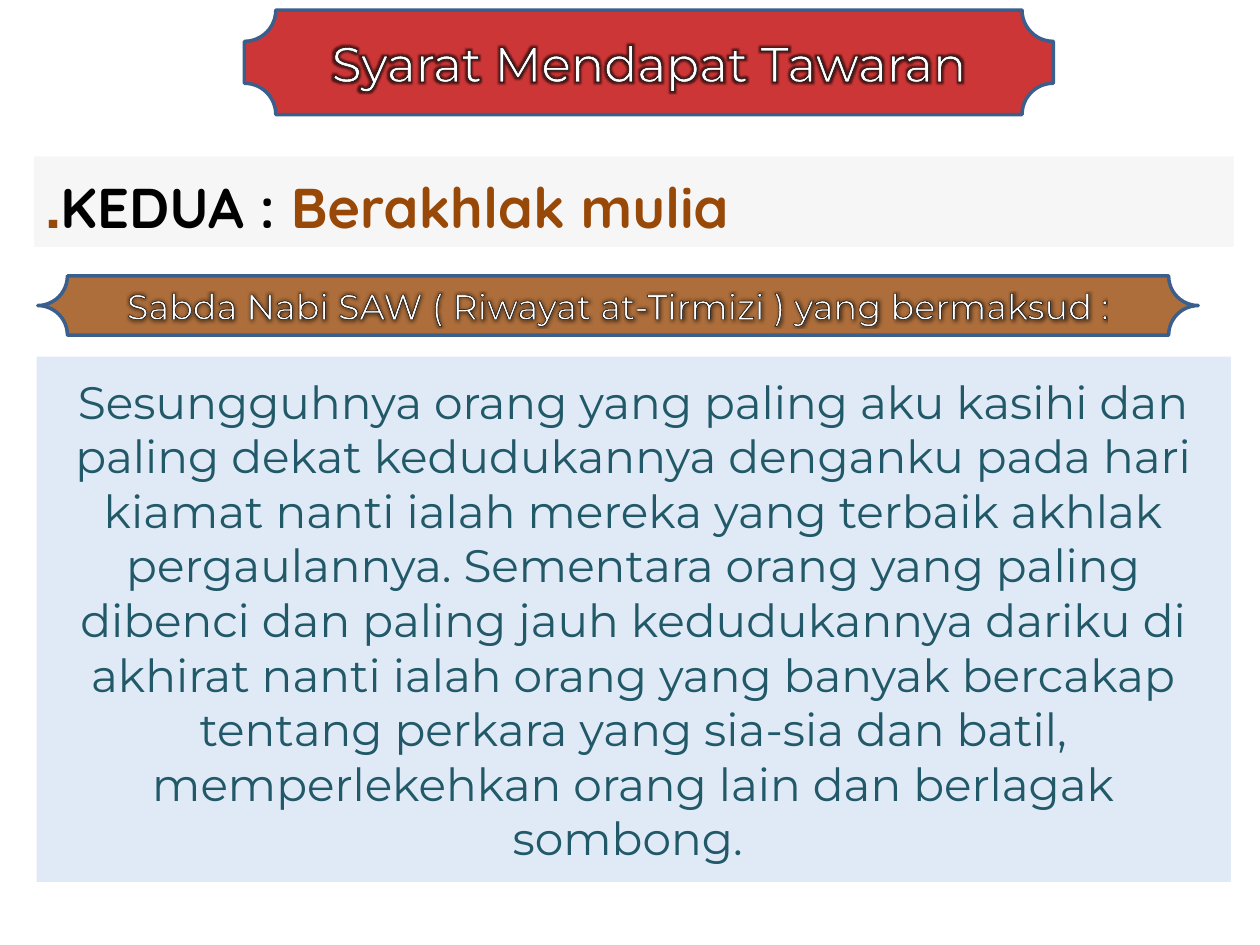
from dataclasses import dataclass

import pptx
import pptx.dml.color
import pptx.enum.shapes
import pptx.enum.text
import pptx.oxml
import pptx.oxml.ns
import pptx.util

SHAPE = pptx.enum.shapes.MSO_SHAPE
ALIGN = pptx.enum.text.PP_ALIGN
ANCHOR = pptx.enum.text.MSO_ANCHOR
Pt = pptx.util.Pt
COLUMNS, ROWS = 100, 75


@dataclass(frozen=True)
class Theme:
    red: str = "C00000"
    brown: str = "984807"
    grey: str = "F2F2F2"
    pale_blue: str = "C6D9F1"
    border: str = "3A5F8C"
    white: str = "FFFFFF"
    black: str = "000000"
    teal: str = "215968"
    body_font: str = "Montserrat"
    heading_font: str = "Quicksand"
    title_size: int = 28
    heading_size: int = 32
    source_size: int = 20
    quote_size: int = 26


@dataclass(frozen=True)
class Area:
    """A place on the slide, in grid columns and rows."""
    column: float
    row: float
    columns: float
    rows: float


@dataclass(frozen=True)
class Panel:
    area: Area
    fill: str
    opacity: int
    corner: float | None = None  # a corner makes the panel a bordered plaque


@dataclass(frozen=True)
class TextStyle:
    font: str
    size: int
    color: str
    bold: bool = False
    halo: bool = False


THEME = Theme()
TITLE = Panel(Area(19.4, 0.8, 64.2, 8.3), THEME.red, 79, 0.3)
HEADING = Panel(Area(2.7, 12.4, 95.2, 7.2), THEME.grey, 69)
SOURCE = Panel(Area(3, 21.9, 92.1, 4.7), THEME.brown, 79, 0.5)
QUOTE = Panel(Area(2.9, 28.3, 94.8, 41.7), THEME.pale_blue, 53)

prs = pptx.Presentation()
prs.slide_width = pptx.util.Inches(10)
prs.slide_height = pptx.util.Inches(7.5)


def rgb(color: str) -> pptx.dml.color.RGBColor:
    return pptx.dml.color.RGBColor.from_string(color)


def position(area: Area) -> tuple[int, int, int, int]:
    column, row = prs.slide_width / COLUMNS, prs.slide_height / ROWS
    return (round(area.column * column), round(area.row * row),
            round(area.columns * column), round(area.rows * row))


def add_panel(slide, panel: Panel):
    kind = SHAPE.RECTANGLE if panel.corner is None else SHAPE.PLAQUE
    shape = slide.shapes.add_shape(kind, *position(panel.area))
    shape.shadow.inherit = False
    shape.fill.solid()
    shape.fill.fore_color.rgb = rgb(panel.fill)
    color = shape.fill._xPr.find(".//" + pptx.oxml.ns.qn("a:srgbClr"))
    color.append(pptx.oxml.parse_xml(
        f'<a:alpha {pptx.oxml.ns.nsdecls("a")} val="{panel.opacity * 1000}"/>'))
    if panel.corner is None:
        shape.line.fill.background()
    else:
        shape.adjustments[0] = panel.corner
        shape.line.color.rgb = rgb(THEME.border)
        shape.line.width = Pt(2)
    return shape


def add_halo(run) -> None:
    """Give white lettering a thin black outline and a soft dark edge."""
    namespace = pptx.oxml.ns.nsdecls("a")
    properties = run.font._rPr
    properties.insert(0, pptx.oxml.parse_xml(
        f'<a:ln {namespace} w="{Pt(0.75)}"><a:solidFill>'
        f'<a:srgbClr val="{THEME.black}"/></a:solidFill></a:ln>'))
    fill = properties.find(pptx.oxml.ns.qn("a:solidFill"))
    fill.addnext(pptx.oxml.parse_xml(
        f'<a:effectLst {namespace}><a:glow rad="{Pt(4)}">'
        f'<a:srgbClr val="{THEME.black}"><a:alpha val="60000"/></a:srgbClr>'
        f'</a:glow></a:effectLst>'))


def write(shape, runs: list[tuple[str, TextStyle]], align=ALIGN.CENTER,
          anchor=ANCHOR.MIDDLE):
    frame = shape.text_frame
    frame.word_wrap = True
    frame.auto_size = pptx.enum.text.MSO_AUTO_SIZE.NONE
    frame.vertical_anchor = anchor
    paragraph = frame.paragraphs[0]
    paragraph.alignment = align
    for words, style in runs:
        run = paragraph.add_run()
        run.text = words
        run.font.name = style.font
        run.font.size = Pt(style.size)
        run.font.bold = style.bold
        run.font.color.rgb = rgb(style.color)
        if style.halo:
            add_halo(run)
    return paragraph


def build() -> None:
    slide = prs.slides.add_slide(prs.slide_layouts[5])

    # Title on its plaque
    add_panel(slide, TITLE)
    title = slide.shapes.title
    title.left, title.top, title.width, title.height = position(TITLE.area)
    slide.shapes._spTree.append(title._element)
    write(title, [("Syarat Mendapat Tawaran", TextStyle(
        THEME.body_font, THEME.title_size, THEME.white, halo=True))])

    # Condition heading, set right to left
    heading = write(add_panel(slide, HEADING), [
        ("KEDUA : ", TextStyle(THEME.heading_font, THEME.heading_size,
                               THEME.black, bold=True)),
        ("Berakhlak mulia.", TextStyle(THEME.heading_font, THEME.heading_size,
                                       THEME.brown, bold=True)),
    ], ALIGN.LEFT, ANCHOR.TOP)
    heading.line_spacing = 1.15
    heading.space_after = Pt(8)
    heading._p.get_or_add_pPr().set("rtl", "1")

    # Source of the saying
    write(add_panel(slide, SOURCE), [
        ("Sabda Nabi SAW ( Riwayat at-Tirmizi ) yang bermaksud :", TextStyle(
            THEME.body_font, THEME.source_size, THEME.white, halo=True))])

    # The saying itself
    saying = (
        "Sesungguhnya orang yang paling aku kasihi dan paling dekat "
        "kedudukannya denganku pada hari kiamat nanti ialah mereka yang "
        "terbaik akhlak pergaulannya. Sementara orang yang paling dibenci dan "
        "paling jauh kedudukannya dariku di akhirat nanti ialah orang yang "
        "banyak bercakap tentang perkara yang sia-sia dan batil, "
        "memperlekehkan orang lain dan berlagak sombong. ")
    write(add_panel(slide, QUOTE), [(saying, TextStyle(
        THEME.body_font, THEME.quote_size, THEME.teal))])

    prs.save("out.pptx")


if __name__ == "__main__":
    build()
